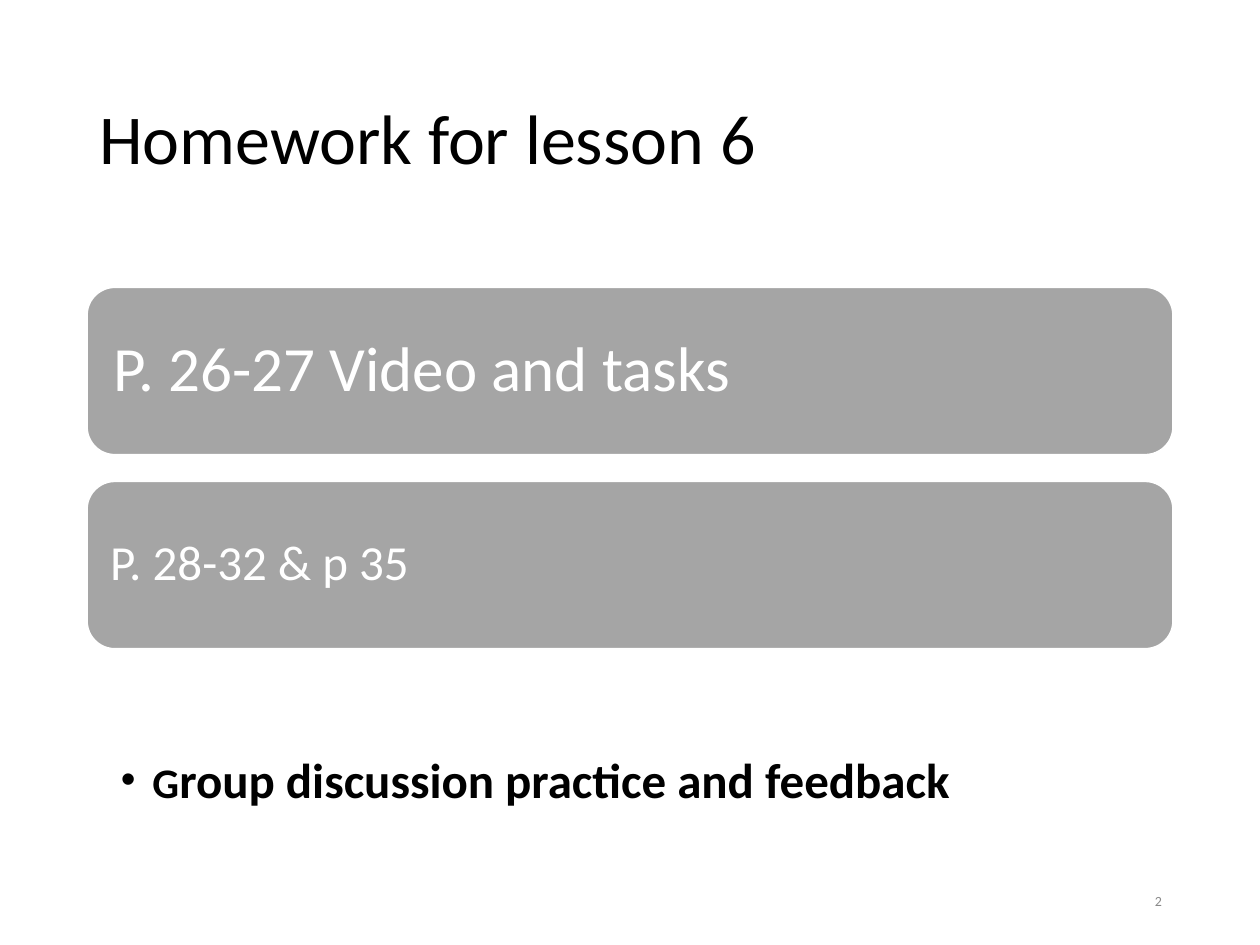
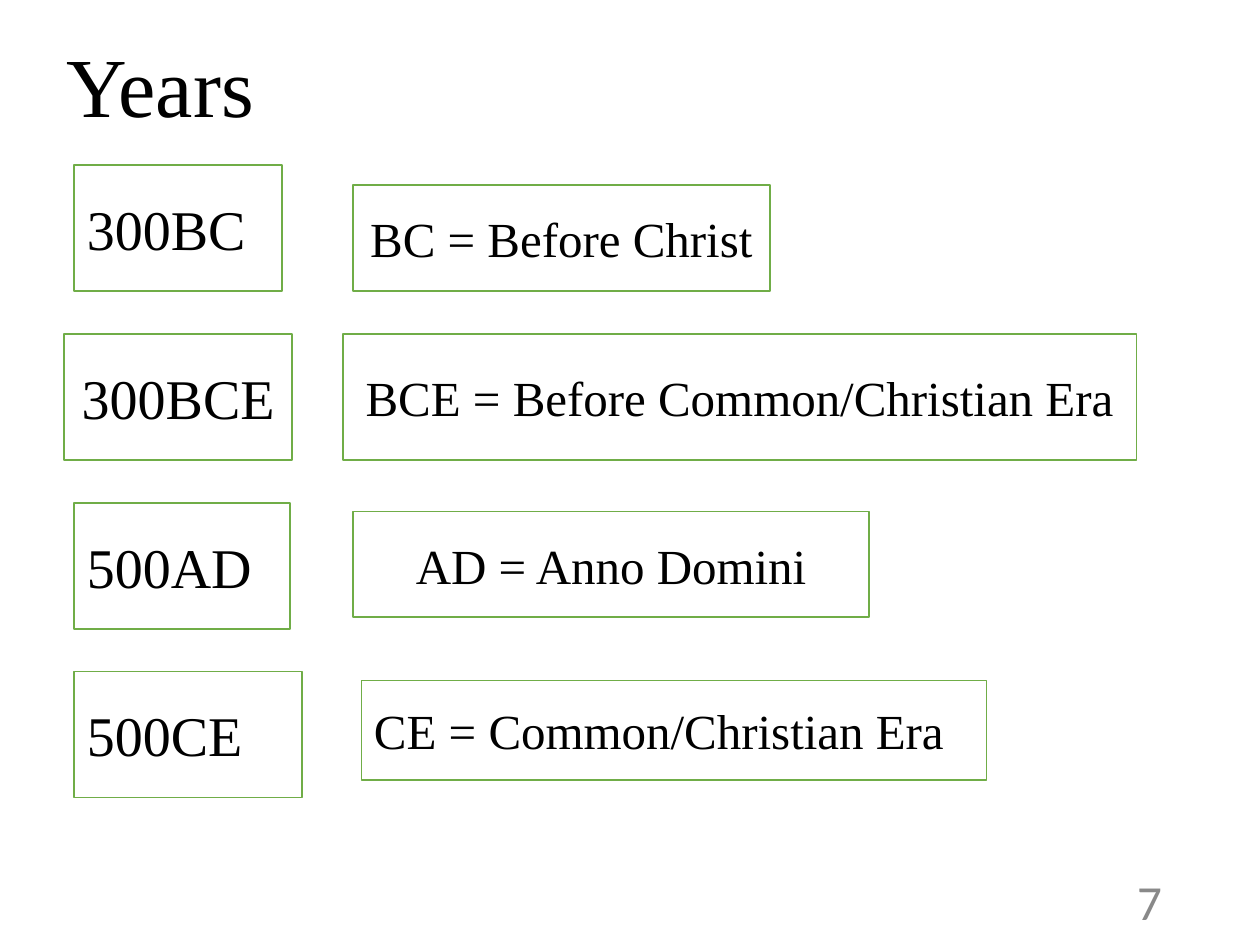
"""Build two lesson slides: the homework list and the year abbreviations."""
from lxml.etree import SubElement
from pptx import Presentation
from pptx.dml.color import RGBColor
from pptx.enum.shapes import MSO_SHAPE
from pptx.enum.text import MSO_ANCHOR, PP_ALIGN
from pptx.oxml.ns import qn
from pptx.util import Inches, Pt

SANS, SERIF = "Calibri", "Times New Roman"
BLACK, WHITE, GREY, GREEN, NUMBER_GREY = "000000", "FFFFFF", "A5A5A5", "70AD47", "898989"
LEFT, CENTER, RIGHT = PP_ALIGN.LEFT, PP_ALIGN.CENTER, PP_ALIGN.RIGHT
MARGIN, CONTENT_WIDTH = 0.69, 8.62


def color(hex_string):
    return RGBColor.from_string(hex_string)


def add_text(slide, place, text, size, font=SANS, ink=BLACK, align=LEFT,
             spacing=1.0, preset=None, fill=None, line=None, inset=0.1):
    box = [Inches(length) for length in place]
    if preset is None:
        shape = slide.shapes.add_textbox(*box)
    else:
        shape = slide.shapes.add_shape(preset, *box)
        shape.shadow.inherit = False
        shape.fill.solid()
        shape.fill.fore_color.rgb = color(fill)
        shape.line.color.rgb = color(line)
        shape.line.width = Pt(1)
    frame = shape.text_frame
    frame.word_wrap = True
    frame.vertical_anchor = MSO_ANCHOR.MIDDLE
    frame.margin_left = frame.margin_right = Inches(inset)
    frame.text = text
    paragraph = frame.paragraphs[0]
    paragraph.alignment = align
    paragraph.line_spacing = spacing
    for run in paragraph.runs:
        run.font.name = font
        run.font.size = Pt(size)
        run.font.color.rgb = color(ink)
    return paragraph


presentation = Presentation()
presentation.slide_width, presentation.slide_height = Inches(10), Inches(7.5)
blank_layout = presentation.slide_layouts[6]
homework, years = [presentation.slides.add_slide(blank_layout) for _ in range(2)]

for slide, title, place, size, font, number, number_size in [
    (homework, "Homework for lesson 6", (MARGIN, 0.4, CONTENT_WIDTH, 1.45), 40, SANS, "2", 8),
    (years, "Years", (0.43, 0.21, 9, 1.02), 48, SERIF, "7", 28),
]:
    add_text(slide, place, title, size, font, spacing=0.9)
    add_text(slide, (7.07, 6.95, 2.25, 0.4), number, number_size, ink=NUMBER_GREY, align=RIGHT)

task_top, task_pitch, task_height = 2.28, 1.54, 1.33
for row, (task, size, inset) in enumerate([
    ("P. 26-27 Video and tasks", 36, 0.15),
    ("P. 28-32 & p 35", 28, 0.12),
]):
    add_text(homework, (MARGIN, task_top + row * task_pitch, CONTENT_WIDTH, task_height),
             task, size, ink=WHITE, spacing=0.9, preset=MSO_SHAPE.ROUNDED_RECTANGLE,
             fill=GREY, line=WHITE, inset=inset)

practice = add_text(homework, (MARGIN, 5.95, CONTENT_WIDTH, 0.52), "G", 24,
                    spacing=0.9, inset=0.27)
rest = practice.add_run()
rest.text = "roup discussion practice and feedback"
rest.font.size = Pt(28)
for run in practice.runs:
    run.font.name = SANS
    run.font.bold = True
    run.font.color.rgb = color(BLACK)
properties = practice._p.get_or_add_pPr()
properties.set("marL", str(Inches(0.25)))
properties.set("indent", str(-Inches(0.25)))
SubElement(properties, qn("a:buFont")).set("typeface", "Arial")
SubElement(properties, qn("a:buChar")).set("char", "•")

year_top, year_pitch, year_height = 1.31, 1.34, 1
for row, (year, year_left, year_width, year_align, meaning, meaning_place, meaning_align) in enumerate([
    ("300BC", 0.59, 1.65, LEFT, "BC = Before Christ", (2.8, 1.47, 3.31, 0.84), CENTER),
    ("300BCE", 0.51, 1.81, CENTER, "BCE = Before Common/Christian Era", (2.72, 2.65, 6.3, 1), CENTER),
    ("500AD", 0.59, 1.71, LEFT, "AD = Anno Domini", (2.8, 4.06, 4.1, 0.84), CENTER),
    ("500CE", 0.59, 1.81, LEFT, "CE = Common/Christian Era", (2.87, 5.4, 4.96, 0.79), LEFT),
]):
    year_place = (year_left, year_top + row * year_pitch, year_width, year_height)
    for place, text, size, align in [(year_place, year, 32, year_align),
                                     (meaning_place, meaning, 28, meaning_align)]:
        add_text(years, place, text, size, SERIF, align=align,
                 preset=MSO_SHAPE.RECTANGLE, fill=WHITE, line=GREEN)

presentation.save("out.pptx")
